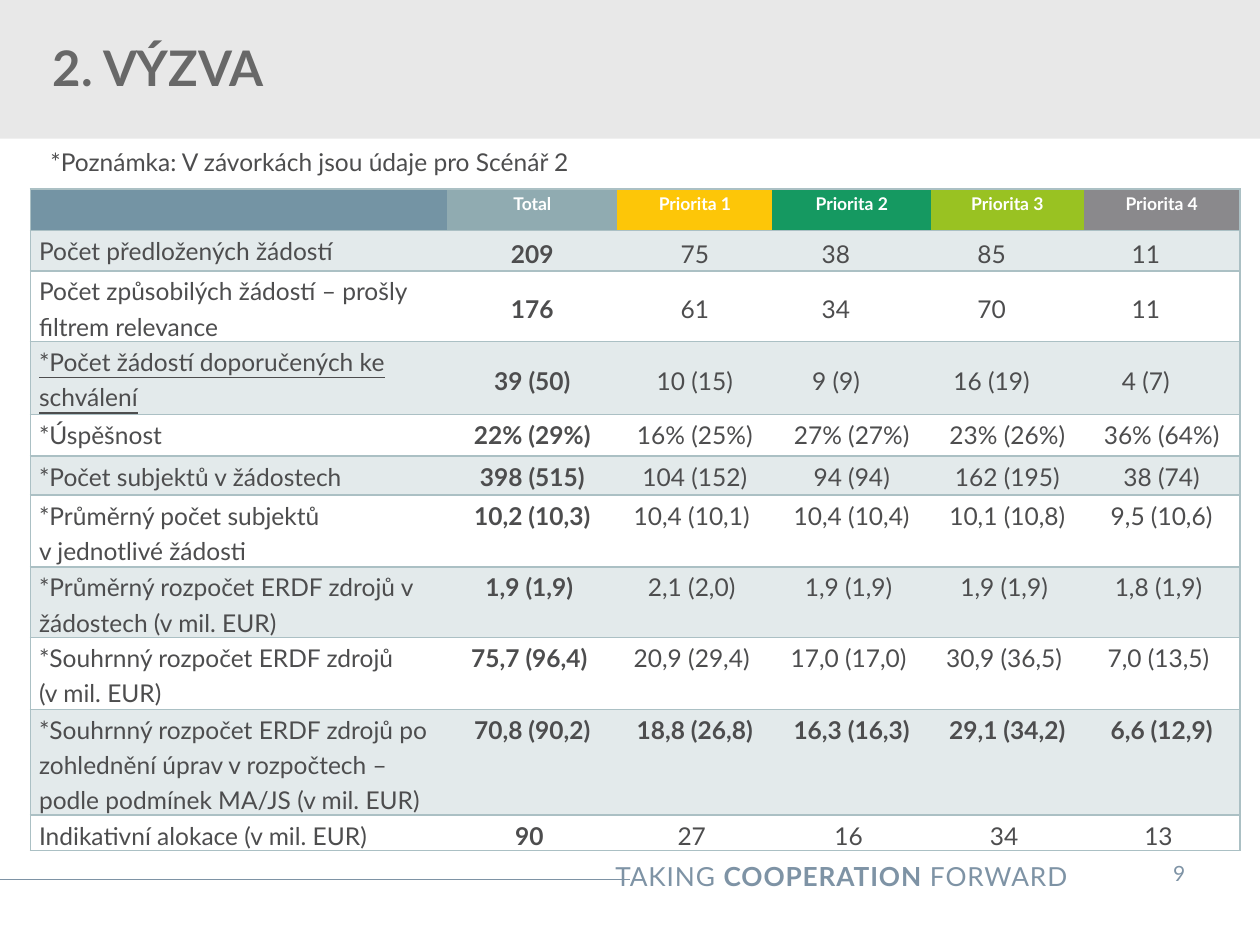
import pptx
import pptx.dml.color
import pptx.enum.shapes
import pptx.enum.text
import pptx.oxml
import pptx.oxml.ns
import pptx.util

Inches = pptx.util.Inches
Pt = pptx.util.Pt
RGBColor = pptx.dml.color.RGBColor
ALIGN = pptx.enum.text.PP_ALIGN
ANCHOR = pptx.enum.text.MSO_ANCHOR

FONT = "Lato"
NO_STYLE = "{2D5ABB26-0587-4C30-8999-92F81FD0307C}"
BAND_GREY = RGBColor(0xE8, 0xE8, 0xE8)
TITLE_GREY = RGBColor(0x68, 0x68, 0x68)
TEXT_GREY = RGBColor(0x4D, 0x4D, 0x4E)
FOOTER_BLUE = RGBColor(0x7E, 0x93, 0xA5)
WHITE = RGBColor(0xFF, 0xFF, 0xFF)
ROW_TINT = RGBColor(0xE3, 0xEA, 0xEB)
BORDER = RGBColor(0xAB, 0xC0, 0xC4)
HEADER_FILLS = [
    RGBColor(0x74, 0x94, 0xA4), RGBColor(0x90, 0xAB, 0xB1), RGBColor(0xFD, 0xC6, 0x08),
    RGBColor(0x15, 0x99, 0x61), RGBColor(0x99, 0xC2, 0x22), RGBColor(0x8A, 0x89, 0x8C),
]

HEADERS = ["", "Total", "Priorita 1", "Priorita 2", "Priorita 3", "Priorita 4"]
ROWS = [
    ["Počet předložených žádostí", "209", "75", "38", "85", "11"],
    ["Počet způsobilých žádostí – prošly filtrem relevance", "176", "61", "34", "70", "11"],
    ["*Počet žádostí doporučených ke schválení",
     "39 (50)", "10 (15)", "9 (9)", "16 (19)", "4 (7)"],
    ["*Úspěšnost", "22% (29%)", "16% (25%)", "27% (27%)", "23% (26%)", "36% (64%)"],
    ["*Počet subjektů v žádostech",
     "398 (515)", "104 (152)", "94 (94)", "162 (195)", "38 (74)"],
    ["*Průměrný počet subjektů \nv jednotlivé žádosti",
     "10,2 (10,3)", "10,4 (10,1) ", "10,4 (10,4)", "10,1 (10,8)", "9,5 (10,6)"],
    ["*Průměrný rozpočet ERDF zdrojů v žádostech (v mil. EUR)",
     "1,9 (1,9) ", "2,1 (2,0) ", "1,9 (1,9) ", "1,9 (1,9) ", "1,8 (1,9) "],
    ["*Souhrnný rozpočet ERDF zdrojů \n(v mil. EUR)",
     "75,7 (96,4) ", "20,9 (29,4) ", "17,0 (17,0) ", "30,9 (36,5) ", "7,0 (13,5) "],
    ["*Souhrnný rozpočet ERDF zdrojů po zohlednění úprav v rozpočtech – "
     "podle podmínek MA/JS (v mil. EUR)",
     "70,8 (90,2)", "18,8 (26,8)", "16,3 (16,3)", "29,1 (34,2)", "6,6 (12,9)"],
    ["Indikativní alokace (v mil. EUR)", "90 ", "27 ", "16 ", "34 ", "13 "],
]
COLUMN_WIDTHS = [3.31, 1.35, 1.23, 1.26, 1.21, 1.24]
ROW_HEIGHTS = [0.33, 0.32, 0.33, 0.58, 0.33, 0.31, 0.57, 0.28, 0.57, 0.68, 0.28]
MIDDLE_ROWS = (1, 2, 3)
UNDERLINED_ROW = 3
BOLD_ROW = 9


def write(paragraph, text, size=14, color=TEXT_GREY, bold=False, underline=None,
          align=ALIGN.LEFT, line_spacing=None, spacing=None):
    """Append text to the paragraph; a newline becomes a line break."""
    paragraph.alignment = align
    if line_spacing:
        paragraph.line_spacing = line_spacing
    for index, line in enumerate(text.split("\n")):
        if index:
            paragraph.add_line_break()
        run = paragraph.add_run()
        run.text = line
        font = run.font
        font.name, font.size, font.bold, font.underline = FONT, Pt(size), bold, underline
        font.color.rgb = color
        if spacing:
            font._element.set("spc", str(int(spacing * 100)))


def add_text_box(slide, box, margins=(0.1, 0.05), wrap=True):
    """Add an empty text box and return its first paragraph."""
    frame = slide.shapes.add_textbox(*map(Inches, box)).text_frame
    frame.word_wrap = wrap
    frame.margin_left = frame.margin_right = Inches(margins[0])
    frame.margin_top = frame.margin_bottom = Inches(margins[1])
    return frame.paragraphs[0]


def add_title_band(slide, box):
    left, top, width, height = box
    band = slide.shapes.add_shape(
        pptx.enum.shapes.MSO_SHAPE.RECTANGLE, *map(Inches, box))
    band.shadow.inherit = False
    band.fill.solid()
    band.fill.fore_color.rgb = BAND_GREY
    band.line.fill.background()

    title = slide.shapes.title
    slide.shapes._spTree.append(title._element)  # bring in front of the band
    title.left, title.top = Inches(left + 0.08), Inches(top + 0.16)
    title.width, title.height = Inches(7.13), Inches(0.75)
    title.text_frame.vertical_anchor = ANCHOR.MIDDLE
    paragraph = title.text_frame.paragraphs[0]
    properties = paragraph._p.get_or_add_pPr()
    properties.set("marL", str(Inches(0.24)))
    properties.set("indent", "0")
    write(paragraph, "2. VÝZVA", size=28, color=TITLE_GREY, bold=True)


def add_footer(slide, box):
    left, top, width, height = box
    line_y = Inches(top + 0.25)
    line = slide.shapes.add_connector(
        pptx.enum.shapes.MSO_CONNECTOR.STRAIGHT,
        Inches(left - 0.01), line_y, Inches(left + width / 2), line_y)
    line.line.color.rgb = FOOTER_BLUE
    line.line.width = Pt(0.75)
    line._element.spPr.append(pptx.oxml.parse_xml(
        f"<a:effectLst {pptx.oxml.ns.nsdecls('a')}/>"))

    slogan = add_text_box(slide, (left + 3.88, top + 0.05, 4.69, 0.35))
    for text, bold in (("TAKING ", False), ("COOPERATION", True), (" FORWARD", False)):
        write(slogan, text, size=15, color=FOOTER_BLUE, bold=bold,
              align=ALIGN.RIGHT, spacing=0.5)
    number = add_text_box(slide, (left + 8.99, top, 0.74, 0.4), (0.2, 0.1), wrap=False)
    write(number, "9", size=12, color=FOOTER_BLUE, align=ALIGN.CENTER)


def set_borders(cell, sides):
    """Draw the listed sides (L, R, T, B, in this order) of a cell."""
    properties = cell._tc.get_or_add_tcPr()
    for index, side in enumerate(sides):
        properties.insert(index, pptx.oxml.parse_xml(
            f"<a:ln{side} {pptx.oxml.ns.nsdecls('a')} w=\"{Pt(1)}\"><a:solidFill>"
            f"<a:srgbClr val=\"{BORDER}\"/></a:solidFill></a:ln{side}>"))


def format_cell(cell, row, column, text):
    cell.margin_left = cell.margin_right = Inches(0.07)
    cell.margin_top = cell.margin_bottom = 0
    if row == 0:
        fill = HEADER_FILLS[column]
    else:
        fill = ROW_TINT if row % 2 else None
    if fill:
        cell.fill.solid()
        cell.fill.fore_color.rgb = fill
    else:
        cell.fill.background()
    set_borders(cell, {0: "LTB", len(HEADERS) - 1: "RTB"}.get(column, "TB"))

    if row in MIDDLE_ROWS and column:
        cell.vertical_anchor = ANCHOR.MIDDLE
        if column > 2:
            cell.margin_right = Inches(0.32)
    if text:
        header = row == 0
        write(cell.text_frame.paragraphs[0], text,
              size=10 if header else 14,
              color=WHITE if header else TEXT_GREY,
              bold=header or column == 1 or (row == BOLD_ROW and column > 0),
              underline=True if row == UNDERLINED_ROW and column == 0 else None,
              align=ALIGN.CENTER if column else ALIGN.LEFT,
              line_spacing=1.2)


def add_results_table(slide, box):
    cells = [HEADERS] + ROWS
    table = slide.shapes.add_table(
        len(cells), len(HEADERS), *map(Inches, box)).table
    table.first_row = table.horz_banding = False
    table._tbl.tblPr.find(pptx.oxml.ns.qn("a:tableStyleId")).text = NO_STYLE
    for column, width in zip(table.columns, COLUMN_WIDTHS):
        column.width = Inches(width)
    for row, height in zip(table.rows, ROW_HEIGHTS):
        row.height = Inches(height)
    for row, texts in enumerate(cells):
        for column, text in enumerate(texts):
            format_cell(table.cell(row, column), row, column, text)


def main():
    presentation = pptx.Presentation()
    presentation.slide_width, presentation.slide_height = Inches(10), Inches(7.5)
    slide = presentation.slides.add_slide(presentation.slide_layouts[5])
    add_title_band(slide, (0, 0, 10, 1.1))
    add_footer(slide, (0, 6.73, 10, 0.4))
    add_results_table(slide, (0.24, 1.5, 9.6, 5.28))
    note = add_text_box(slide, (0.32, 1.13, 4.46, 0.32), (0.08, 0.04), wrap=False)
    write(note, "*Poznámka: V závorkách jsou údaje pro Scénář 2")
    presentation.save("out.pptx")


if __name__ == "__main__":
    main()
